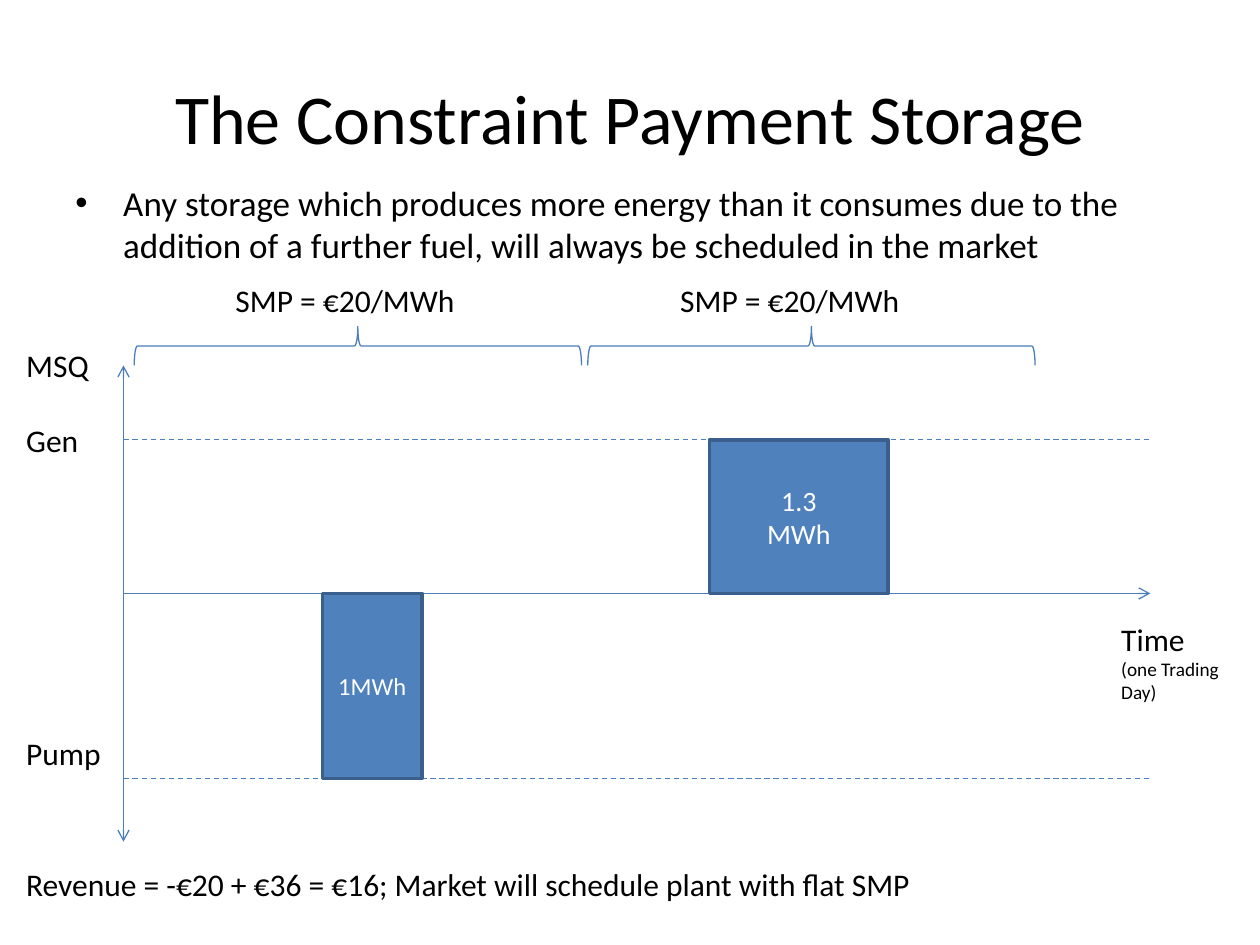
from pptx import Presentation
from pptx.dml.color import RGBColor
from pptx.enum.dml import MSO_LINE
from pptx.enum.shapes import MSO_CONNECTOR, MSO_SHAPE
from pptx.enum.text import MSO_ANCHOR, PP_ALIGN
from pptx.oxml.ns import qn
from pptx.util import Inches, Pt
from lxml.etree import SubElement

BLACK = RGBColor(0x00, 0x00, 0x00)
WHITE = RGBColor(0xFF, 0xFF, 0xFF)
BLUE = RGBColor(0x4F, 0x81, 0xBD)
EDGE = RGBColor(0x3A, 0x5F, 0x8C)
RULE = RGBColor(0x4B, 0x7E, 0xBC)

# Grid in inches: columns of the time axis, rows of the energy axis
LEFT, RIGHT = 0.98, 9.13
TOP, GEN, ZERO, PUMP, BASE = 2.9, 3.49, 4.71, 6.18, 6.68
SIDE = 0.11

deck = Presentation()
deck.slide_width, deck.slide_height = Inches(10), Inches(7.5)
slide = deck.slides.add_slide(deck.slide_layouts[6])
shapes = slide.shapes


def write(frame, runs, color=BLACK, align=PP_ALIGN.LEFT, anchor=MSO_ANCHOR.TOP):
    frame.word_wrap = True
    frame.vertical_anchor = anchor
    par = frame.paragraphs[0]
    par.alignment = align
    for text, size in runs:
        if text == "\n":
            par.add_line_break()
            continue
        run = par.add_run()
        run.text = text
        run.font.name = "Calibri"
        run.font.size = Pt(size)
        run.font.color.rgb = color
    return par


def draw(x1, y1, x2, y2, ends=(), dash=False):
    line = shapes.add_connector(
        MSO_CONNECTOR.STRAIGHT, Inches(x1), Inches(y1), Inches(x2), Inches(y2))
    line.line.color.rgb = RULE
    line.line.width = Pt(0.75)
    if dash:
        line.line.dash_style = MSO_LINE.DASH
    props = line.element.spPr
    for end in ends:
        SubElement(props.find(qn("a:ln")), qn(end), type="arrow")
    SubElement(props, qn("a:effectLst"))


# Title
box = shapes.add_textbox(Inches(0.5), Inches(0.3), Inches(9), Inches(1.25))
write(box.text_frame, [("The Constraint Payment Storage", 40)],
      align=PP_ALIGN.CENTER, anchor=MSO_ANCHOR.MIDDLE)

# Bullet point
box = shapes.add_textbox(Inches(0.5), Inches(1.39), Inches(8.93), Inches(0.8))
par = write(box.text_frame, [(
    "Any storage which produces more energy than it consumes due to the "
    "addition of a further fuel, will always be scheduled in the market", 20)])
props = par._p.get_or_add_pPr()
props.set("marL", str(Inches(0.38)))
props.set("indent", str(-Inches(0.38)))
SubElement(props, qn("a:buFont"), typeface="Arial")
SubElement(props, qn("a:buChar"), char="•")

# Axes and levels
draw(LEFT, TOP, LEFT, BASE, ends=("a:headEnd", "a:tailEnd"))
draw(LEFT, ZERO, RIGHT, ZERO, ends=("a:tailEnd",))
for level in (GEN, PUMP):
    draw(LEFT, level, RIGHT, level, dash=True)

# Price braces, turned to open downwards
thick, span = 0.31, 3.55
for mid in (2.84, 6.44):
    brace = shapes.add_shape(
        MSO_SHAPE.RIGHT_BRACE, Inches(mid - thick / 2),
        Inches(TOP - thick / 2 - span / 2), Inches(thick), Inches(span))
    brace.rotation = 270
    brace.shadow.inherit = False
    brace.fill.background()
    brace.line.color.rgb = RULE
    brace.line.width = Pt(0.75)

# Labels
price = [("SMP = €20/MWh", 18)]
for x, y, wide, high, runs in (
    (SIDE, 2.7, 0.87, 0.4, [("MSQ", 18)]),
    (SIDE, 3.29, 0.87, 0.4, [("Gen", 18)]),
    (SIDE, 5.78, 0.87, 0.4, [("Pump", 18)]),
    (1.77, 2.18, 2.28, 0.4, price),
    (5.3, 2.18, 2.28, 0.4, price),
    (8.8, 4.87, 1.01, 0.77, [("Time ", 18), ("(one Trading Day)", 11)]),
    (SIDE, 6.82, 7.56, 0.4, [(
        "Revenue = -€20 + €36 = €16; Market will schedule plant with flat SMP", 18)]),
):
    box = shapes.add_textbox(Inches(x), Inches(y), Inches(wide), Inches(high))
    write(box.text_frame, runs)

# Energy blocks
for x, wide, top, low, runs in (
    (2.56, 0.79, ZERO, PUMP, [("1MWh", 14)]),
    (5.63, 1.42, GEN, ZERO, [("1.3", 16), ("\n", 16), ("MWh", 16)]),
):
    block = shapes.add_shape(
        MSO_SHAPE.RECTANGLE, Inches(x), Inches(top), Inches(wide), Inches(low - top))
    block.shadow.inherit = False
    block.fill.solid()
    block.fill.fore_color.rgb = BLUE
    block.line.color.rgb = EDGE
    block.line.width = Pt(2)
    write(block.text_frame, runs, WHITE, PP_ALIGN.CENTER, MSO_ANCHOR.MIDDLE)

deck.save("out.pptx")
